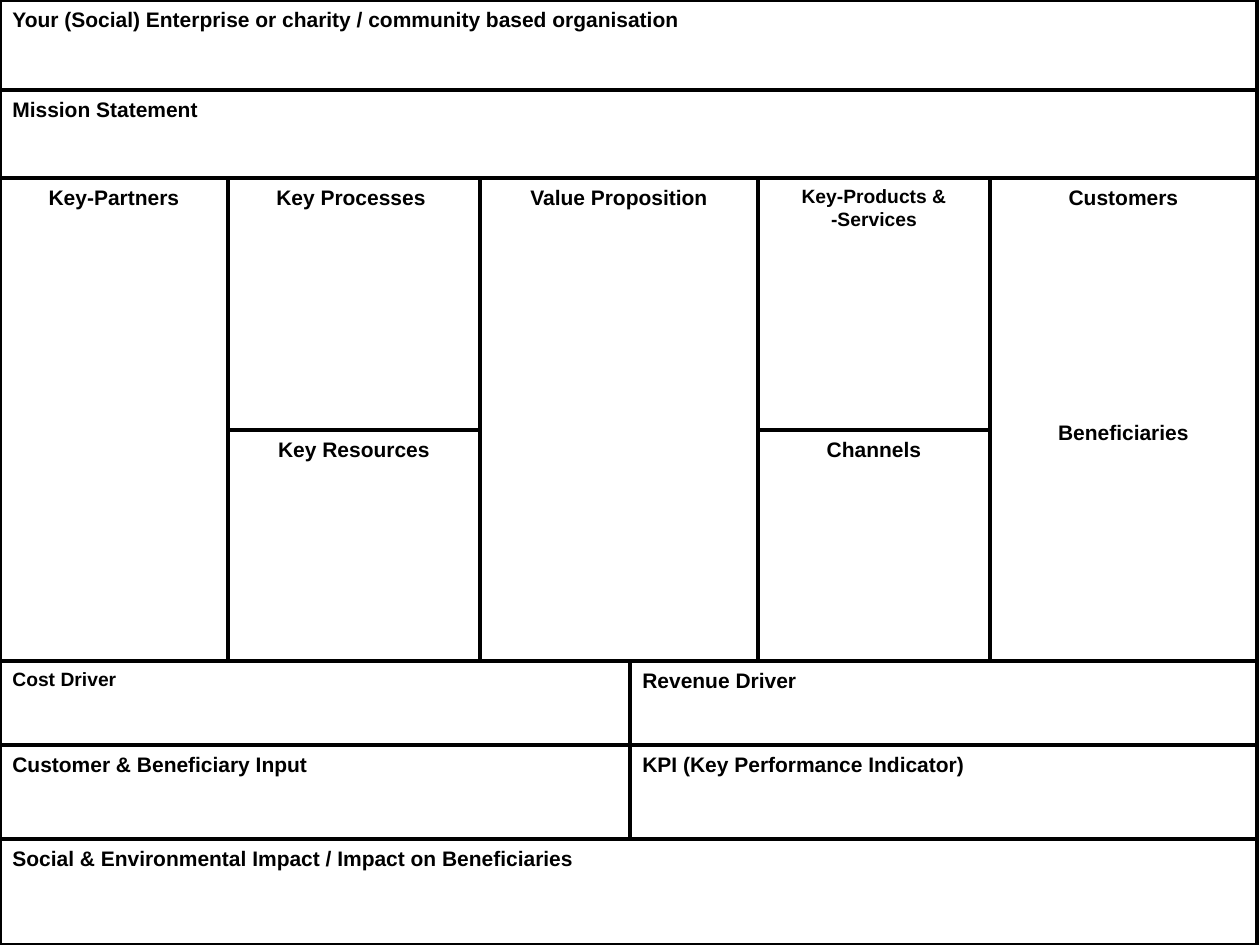
from pptx import Presentation
from pptx import util as u
from pptx.dml.color import RGBColor
from pptx.enum import shapes, text

PX = u.Inches(1) / 126
BLACK = RGBColor(0, 0, 0)
WHITE = RGBColor(255, 255, 255)
LEFT, CENTER = text.PP_ALIGN.LEFT, text.PP_ALIGN.CENTER

# Grid lines of the canvas, in px
COLUMNS = {"start": 0, "partners": 228, "processes": 480, "half": 630,
           "value": 758, "products": 990, "end": 1257}
ROWS = {"top": 0, "name": 90, "mission": 178, "middle": 430,
        "model": 661, "drivers": 745, "inputs": 839, "bottom": 945}

# Paragraphs, left, right, top and bottom grid lines, alignment, text size
BOXES = [
    (["Your (Social) Enterprise or charity / community based organisation"],
     "start", "end", "top", "name", LEFT, 12),
    (["Mission Statement"], "start", "end", "name", "mission", LEFT, 12),
    (["Key-Partners"], "start", "partners", "mission", "model", CENTER, 12),
    (["Key Processes "], "partners", "processes", "mission", "middle", CENTER, 12),
    (["Key Resources"], "partners", "processes", "middle", "model", CENTER, 12),
    (["Value Proposition"], "processes", "value", "mission", "model", CENTER, 12),
    (["Key-Products &", "-Services"],
     "value", "products", "mission", "middle", CENTER, 11),
    (["Channels"], "value", "products", "middle", "model", CENTER, 12),
    (["Customers", "Beneficiaries"],
     "products", "end", "mission", "model", CENTER, 12),
    (["Cost Driver"], "start", "half", "model", "drivers", LEFT, 11),
    (["Revenue Driver"], "half", "end", "model", "drivers", LEFT, 12),
    (["Customer & Beneficiary Input"],
     "start", "half", "drivers", "inputs", LEFT, 12),
    (["KPI (Key Performance Indicator)"],
     "half", "end", "drivers", "inputs", LEFT, 12),
    (["Social & Environmental Impact / Impact on Beneficiaries"],
     "start", "end", "inputs", "bottom", LEFT, 12),
]
SPACE_BEFORE = {"Beneficiaries": 120}


def px(length):
    return u.Emu(round(length * PX))


def add_box(slide, lines, left, right, top, bottom, alignment, size):
    x, y = COLUMNS[left], ROWS[top]
    shape = slide.shapes.add_shape(
        shapes.MSO_SHAPE.RECTANGLE, px(x), px(y),
        px(COLUMNS[right] - x), px(ROWS[bottom] - y))
    shape.shadow.inherit = False
    shape.fill.solid()
    shape.fill.fore_color.rgb = WHITE
    shape.line.color.rgb = BLACK
    shape.line.width = u.Pt(2)

    frame = shape.text_frame
    frame.word_wrap = True
    frame.vertical_anchor = text.MSO_ANCHOR.TOP
    frame.text = "\n".join(lines)
    for paragraph, line in zip(frame.paragraphs, lines):
        paragraph.alignment = alignment
        paragraph.space_before = u.Pt(SPACE_BEFORE.get(line, 0))
        font = paragraph.font
        font.name, font.size, font.bold = "Arial", u.Pt(size), True
        font.color.rgb = BLACK


def main():
    presentation = Presentation()
    presentation.slide_width, presentation.slide_height = px(1260), px(945)
    slide = presentation.slides.add_slide(presentation.slide_layouts[6])
    for box in BOXES:
        add_box(slide, *box)
    presentation.save("out.pptx")


if __name__ == "__main__":
    main()
